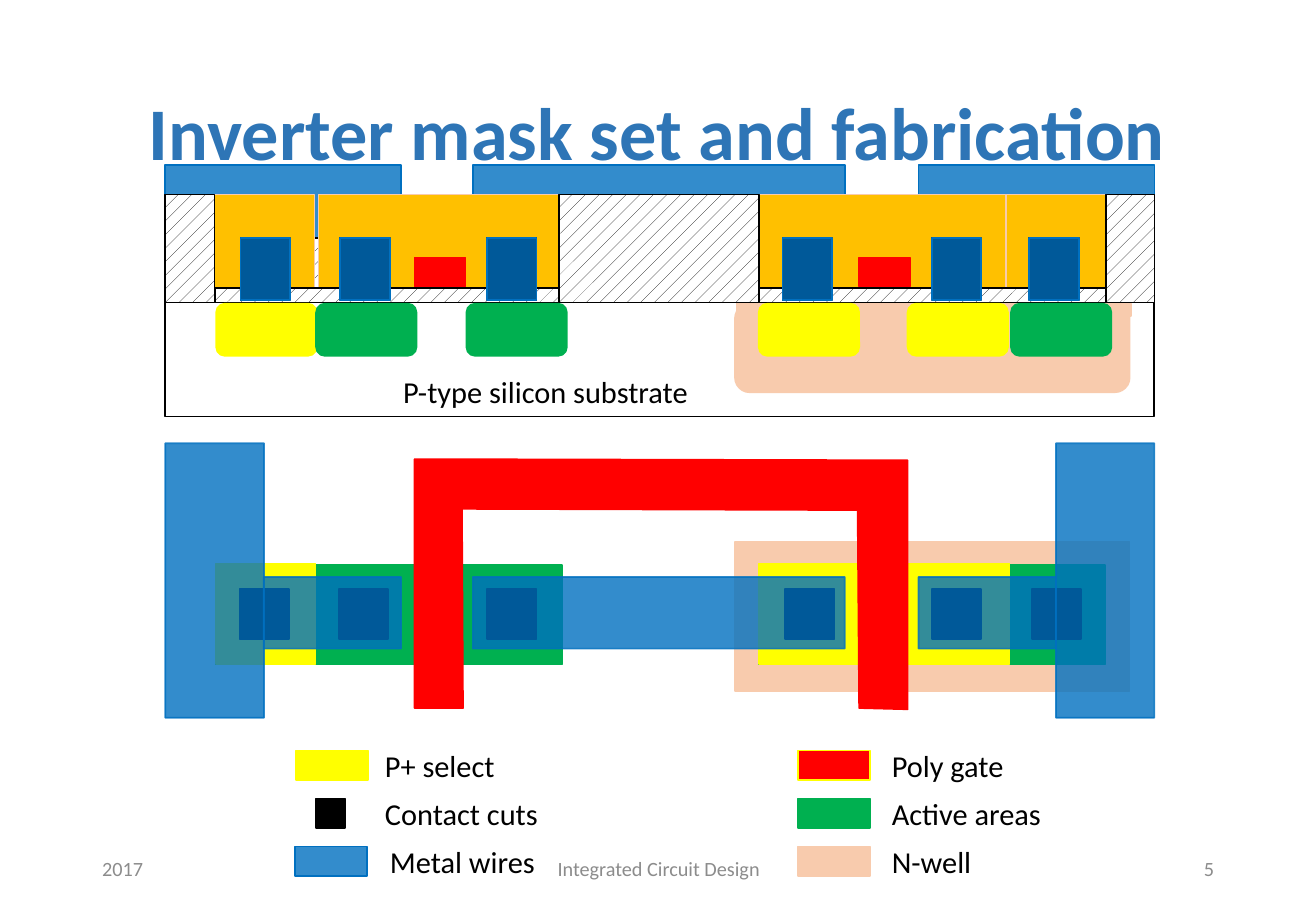
from lxml import etree
from pptx import Presentation
from pptx.dml.color import RGBColor
from pptx.enum.dml import MSO_PATTERN
from pptx.enum.shapes import MSO_SHAPE
from pptx.enum.text import MSO_ANCHOR, PP_ALIGN
from pptx.oxml.ns import qn
from pptx.util import Inches, Pt

RECTANGLE = MSO_SHAPE.RECTANGLE
ROUNDED = MSO_SHAPE.ROUNDED_RECTANGLE
DOTS = MSO_PATTERN.PERCENT_10
LEFT, CENTER, RIGHT = PP_ALIGN.LEFT, PP_ALIGN.CENTER, PP_ALIGN.RIGHT
TOP, MIDDLE = MSO_ANCHOR.TOP, MSO_ANCHOR.MIDDLE

ORIGIN, COLUMN, ROW = 1.36, 0.407, 0.1

LAYERS = {
    "well": {"fill": "F8CBAD", "line": "F8CBAD"},
    "oxide": {"fill": "FFC000", "line": "F8CBAD"},
    "active": {"fill": "00B050", "line": "00B050"},
    "select": {"fill": "FFFF00", "line": "FFFF00"},
    "poly": {"fill": "FF0000", "line": "FF0000"},
    "poly key": {"fill": "FF0000", "line": "FFFF00"},
    "contact": {"fill": "000000", "line": "000000"},
    "metal": {"fill": "0070C0", "line": "0070C0", "fill_alpha": 80},
    "wire": {"fill": "0070C0", "line": "0070C0", "fill_alpha": 80, "line_alpha": 80},
    "insulator": {"pattern": DOTS, "line": "000000"},
    "substrate": {"line": "000000"},
}

SECTION_BASE = [
    ("well", RECTANGLE, 25, 1, [(11.55, 7.98)]),
    ("metal", RECTANGLE, 13.6, 6, [(0, 4.77), (6.22, 7.52), (15.23, 4.77)]),
    ("insulator", RECTANGLE, 19.6, 5.2, [(0, 20)]),
    ("oxide", RECTANGLE, 16, 7.9, [(11.52, 5.48), (0.02, 3), (17, 2.19), (3.1, 5.16)]),
]

CONTACTS_IN_SECTION = [(column, 1) for column in (1.52, 3.54, 6.51, 12.48, 15.5, 17.47)]
CONTACTS_IN_PLAN = [(column, 1) for column in (1.5, 3.51, 6.51, 12.53, 15.5, 17.52)]

SECTION = [
    ("substrate", RECTANGLE, 24.9, 9.4, [(0, 20)]),
    ("well", ROUNDED, 25, 7.3, [(11.52, 7.98)]),
    ("insulator", RECTANGLE, 23.7, 1.2, [(11.74, 7.44), (1, 7.25)]),
    ("insulator", RECTANGLE, 16, 8.9, [(19.02, 0.98), (7.96, 4.05), (0, 1)]),
    ("select", ROUNDED, 25, 4.3, [(1.03, 2.03), (12, 2.03), (15.01, 2.03)]),
    ("poly", RECTANGLE, 21.2, 2.4, [(5.04, 1.03), (14.03, 1.03)]),
    ("contact", RECTANGLE, 19.6, 5.1, CONTACTS_IN_SECTION),
    ("metal", RECTANGLE, 19.6, 5.1, CONTACTS_IN_SECTION),
    ("active", ROUNDED, 25, 4.3, [(3.05, 2.03), (6.09, 2.03), (17.1, 2.03)]),
]

PLAN_BASE = [
    ("well", RECTANGLE, 44.6, 12.3, [(11.52, 7.98)]),
    ("active", RECTANGLE, 46.5, 8.2, [(12.01, 7), (1.03, 7)]),
    ("select", RECTANGLE, 46.4, 8.3, [(1.03, 2.01), (12.01, 5.06)]),
]

PLAN_TOP = [
    ("contact", RECTANGLE, 48.5, 4.1, CONTACTS_IN_PLAN),
    ("wire", RECTANGLE, 47.5, 5.9, [(1.99, 2.78), (6.22, 7.52), (15.23, 2.78)]),
    ("wire", RECTANGLE, 36.5, 22.6, [(0, 2), (18.01, 1.99)]),
]

GATE_OUTLINE = [
    (5.04, 58.3), (5.04, 37.8), (15.01, 37.9), (15.01, 58.4),
    (14.03, 58.3), (14, 42), (6, 41.9), (6.02, 58.3),
]

LEGEND = [
    [("select", "P+ select", 2.65, 1.45, 4.2), ("poly key", "Poly gate", 12.8, 1.45, 14.45)],
    [("contact", "Contact cuts", 3.05, 0.59, 4.2), ("active", "Active areas", 12.8, 1.45, 14.45)],
    [("metal", "Metal wires", 2.63, 1.45, 4.3), ("well", "N-well", 12.8, 1.45, 14.45)],
]

FOOTER = [
    ("2017", -1.52, 6, LEFT),
    ("Integrated Circuit Design", 5.48, 9, CENTER),
    ("5", 15.45, 6, RIGHT),
]


def color(value):
    return RGBColor.from_string(value)


def place(column, row):
    return Inches(ORIGIN + column * COLUMN), Inches(row * ROW)


def box(column, row, width, height):
    return *place(column, row), Inches(width * COLUMN), Inches(height * ROW)


def set_alpha(solid_fill, percent):
    etree.SubElement(solid_fill[0], qn("a:alpha"), val=str(percent * 1000))


def paint(shape, layer):
    style = LAYERS[layer]
    shape.shadow.inherit = False
    shape.line.color.rgb = color(style["line"])
    shape.line.width = Pt(1)
    if "pattern" in style:
        shape.fill.patterned()
        shape.fill.pattern = style["pattern"]
        shape.fill.fore_color.rgb = color("000000")
        shape.fill.back_color.rgb = color("FFFFFF")
    elif "fill" in style:
        shape.fill.solid()
        shape.fill.fore_color.rgb = color(style["fill"])
    else:
        shape.fill.background()
    properties = shape._element.spPr
    for key, tag in (("fill_alpha", "a:solidFill"), ("line_alpha", "a:ln/a:solidFill")):
        if key in style:
            set_alpha(properties.find("/".join(qn(part) for part in tag.split("/"))), style[key])


def add_regions(slide, regions):
    for layer, outline, row, height, spans in regions:
        for column, width in spans:
            shape = slide.shapes.add_shape(outline, *box(column, row, width, height))
            paint(shape, layer)


def add_text(slide, text, area, size=18, ink="000000", bold=False,
             align=LEFT, anchor=TOP, spacing=1.0):
    frame = slide.shapes.add_textbox(*box(*area)).text_frame
    frame.word_wrap = True
    frame.vertical_anchor = anchor
    paragraph = frame.paragraphs[0]
    paragraph.alignment = align
    paragraph.line_spacing = spacing
    run = paragraph.add_run()
    run.text = text
    for name, value in {"name": "Calibri", "size": Pt(size), "bold": bold}.items():
        setattr(run.font, name, value)
    run.font.color.rgb = color(ink)


def add_gate(slide):
    start, *corners = [place(*corner) for corner in GATE_OUTLINE]
    builder = slide.shapes.build_freeform(*start, scale=1.0)
    builder.add_line_segments(corners, close=True)
    paint(builder.convert_to_shape(), "poly")


def add_legend(slide):
    for index, entries in enumerate(LEGEND):
        row = 61.8 + 3.95 * index
        for layer, label, column, width, label_column in entries:
            add_regions(slide, [(layer, RECTANGLE, row, 2.4, [(column, width)])])
            add_text(slide, label, (label_column, row - 0.8, 4.1, 4))


def main():
    presentation = Presentation()
    presentation.slide_width = Inches(10.83)
    presentation.slide_height = Inches(7.5)
    slide = presentation.slides.add_slide(presentation.slide_layouts[6])
    add_regions(slide, SECTION_BASE)
    add_text(slide, "Inverter mask set and fabrication", (-1.52, 4, 22.95, 14.5),
             size=44, ink="2E75B6", bold=True, align=CENTER, anchor=MIDDLE, spacing=0.9)
    for text, column, width, align in FOOTER:
        add_text(slide, text, (column, 69.5, width, 4),
                 size=12, ink="8C8C8C", align=align, anchor=MIDDLE)
    add_regions(slide, SECTION)
    add_text(slide, "P-type silicon substrate", (4.57, 30.2, 6.46, 4))
    add_regions(slide, PLAN_BASE)
    add_gate(slide)
    add_regions(slide, PLAN_TOP)
    add_legend(slide)
    presentation.save("out.pptx")


if __name__ == "__main__":
    main()
